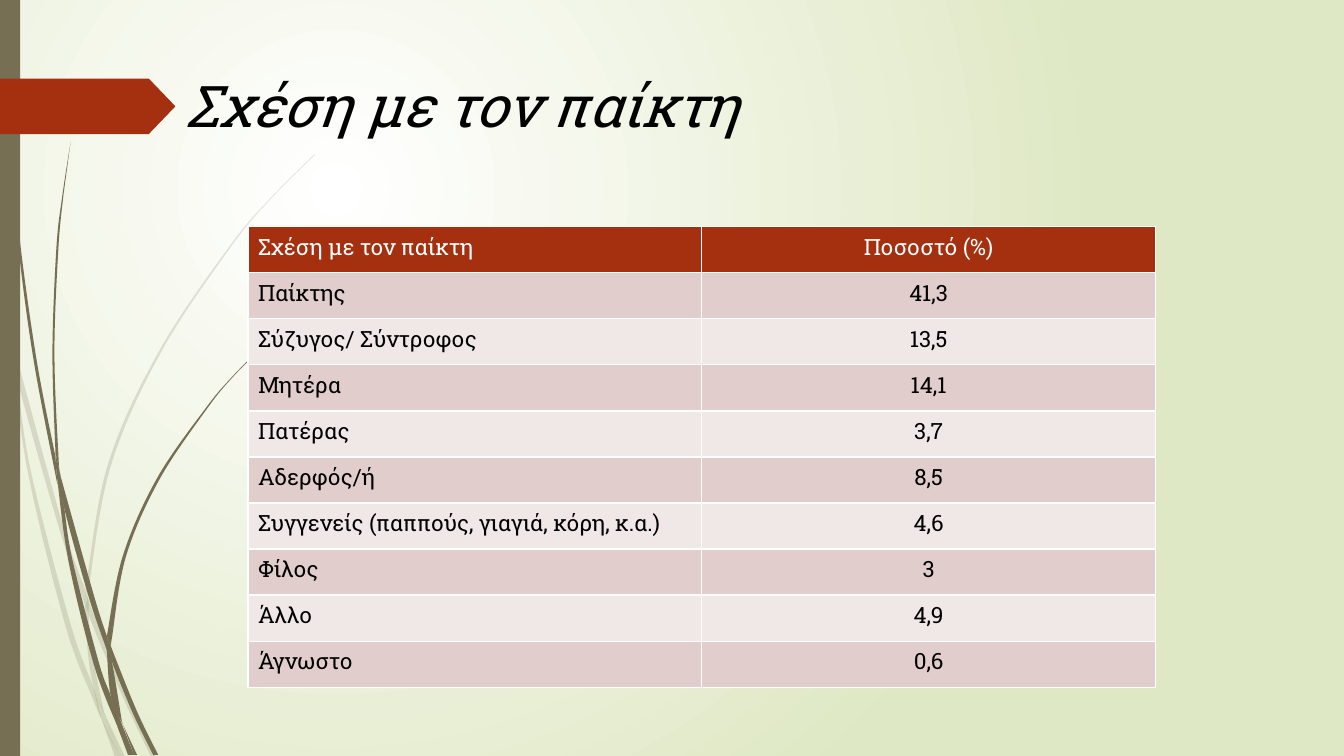
from lxml import etree
from pptx import Presentation
from pptx import util as u
from pptx.dml.color import RGBColor
from pptx.enum import shapes, text
from pptx.oxml.ns import qn

FONT = "Roboto Slab"
OLIVE, RUST, WHITE, BLACK = "766F54", "A53010", "FFFFFF", "000000"
HEADING = "Σχέση με τον παίκτη"
RELATIONS = [
    (HEADING, "Ποσοστό (%)"),
    ("Παίκτης", "41,3"),
    ("Σύζυγος/ Σύντροφος", "13,5"),
    ("Μητέρα", "14,1"),
    ("Πατέρας", "3,7"),
    ("Αδερφός/ή", "8,5"),
    ("Συγγενείς (παππούς, γιαγιά, κόρη, κ.α.)", "4,6"),
    ("Φίλος", "3"),
    ("Άλλο", "4,9"),
    ("Άγνωστο", "0,6"),
]
PALE_BLADES = [
    ([(.11, 3.5), (.09, 3.22), (0, 2.82)], [(0, 2.99), (.1, 3.44)]),
    ([(.14, 3.45), (.17, 3.76), (.58, 5.22), (.84, 5.99)],
     [(.85, 5.86), (.62, 5.2), (.14, 3.45)]),
    ([(.88, 5.96), (.88, 6.1), (1.23, 6.94), (1.5, 7.51)],
     [(1.55, 7.51), (1.27, 6.92), (.92, 6.07)]),
    ([(1.05, 7.11), (1.19, 7.51)], [(1.24, 7.51), (1.05, 7.11)]),
    ([(.11, 3.5), (.28, 4.7), (.65, 6.21), (.92, 6.93), (1.01, 7.14)],
     [(.99, 7.07), (.93, 6.83), (.7, 6.19), (.31, 4.69), (.17, 3.76)]),
    ([(.84, 5.99), (.87, 6.46), (.93, 6.83), (1.05, 7.11)],
     [(1.03, 7.06), (.91, 6.46), (.88, 6.1)]),
    ([(3.12, 1.53), (2.68, 1.97), (2.28, 2.44), (1.58, 3.48), (1.07, 4.61),
      (.85, 5.84)],
     [(.88, 5.96), (.88, 5.84), (1.1, 4.62), (1.6, 3.49), (2.29, 2.45),
      (2.68, 1.98), (3.12, 1.54)]),
    ([(1.01, 7.14), (1.14, 7.51)], [(1.19, 7.51), (1.01, 7.14)]),
    ([(.85, 5.86), (.84, 5.99), (.88, 6.08)], [(.88, 5.96), (.85, 5.86)]),
    ([(.93, 6.83), (1.01, 7.14), (1.19, 7.51)],
     [(1.19, 7.51), (1.05, 7.11), (.96, 6.92)]),
]
DARK_BLADES = [
    ([(.03, 0), (.07, 1.1), (.17, 2.33), (.33, 3.55), (.57, 4.81)],
     [(.55, 4.53), (.36, 3.55), (.19, 2.32), (.08, 1.09), (.04, 0)]),
    ([(.6, 4.72), (.64, 5.05), (.88, 5.92), (1.06, 6.45)],
     [(1.06, 6.31), (.93, 5.9), (.6, 4.72)]),
    ([(1.1, 6.41), (1.11, 6.56), (1.32, 7.08), (1.52, 7.49)],
     [(1.57, 7.49), (1.36, 7.06), (1.13, 6.49)]),
    ([(.57, 4.77), (.68, 5.57), (.93, 6.59), (1.17, 7.22)],
     [(1.16, 7.17), (1.1, 6.91), (.98, 6.57), (.72, 5.56), (.64, 5.05)]),
    ([(.7, 1.41), (.62, 1.93), (.56, 2.45), (.52, 3.49), (.55, 4.49)],
     [(.6, 4.72), (.58, 4.53), (.54, 3.49), (.58, 2.45), (.63, 1.93)]),
    ([(1.22, 7.19), (1.33, 7.49)], [(1.36, 7.49), (1.22, 7.19)]),
    ([(.55, 4.49), (.57, 4.77), (.64, 5.05)], [(.6, 4.72), (.55, 4.49)]),
    ([(2.6, 3.44), (2.31, 3.73), (2.04, 4.05), (1.56, 4.74), (1.22, 5.51),
      (1.06, 6.31)],
     [(1.1, 6.41), (1.11, 6.33), (1.25, 5.52), (1.58, 4.76), (2.05, 4.06),
      (2.31, 3.74), (2.61, 3.44)]),
    ([(1.17, 7.22), (1.27, 7.49)], [(1.31, 7.49), (1.17, 7.22)]),
    ([(1.06, 6.45), (1.1, 6.91), (1.22, 7.19)],
     [(1.21, 7.16), (1.11, 6.56), (1.06, 6.45)]),
    ([(1.06, 6.31), (1.06, 6.45), (1.11, 6.56)], [(1.1, 6.41), (1.06, 6.31)]),
    ([(1.1, 6.91), (1.17, 7.22), (1.3, 7.49)], [(1.33, 7.49), (1.16, 7.06)]),
]


def rgb(code):
    """Turn a hex string into a colour."""
    return RGBColor.from_string(code)


def paint(shape, code, opacity=100):
    """Fill a shape with one colour, without line or shadow."""
    shape.shadow.inherit = False
    shape.line.fill.background()
    shape.fill.solid()
    shape.fill.fore_color.rgb = rgb(code)
    if opacity < 100:
        color = shape.element.spPr.find(".//" + qn("a:srgbClr"))
        etree.SubElement(color, qn("a:alpha"), val=str(opacity * 1000))


def style_text(frame, size, code, align, italic=False):
    """Format the only paragraph of a text frame."""
    paragraph = frame.paragraphs[0]
    paragraph.alignment = align
    font = paragraph.runs[0].font
    font.name, font.size, font.italic, font.bold = FONT, u.Pt(size), italic, False
    font.color.rgb = rgb(code)


def bend(line, before, start, end, after):
    """Turn a straight segment into a curve that flows through its neighbours."""
    line.tag = qn("a:cubicBezTo")
    controls = ([s + (e - b) / 6 for b, s, e in zip(before, start, end)],
                [e - (a - s) / 6 for s, e, a in zip(start, end, after)])
    for i, (x, y) in enumerate(controls):
        line.insert(i, etree.Element(qn("a:pt"), x=str(round(x)), y=str(round(y))))


def add_blade(slide, edges, opacity):
    """Draw a piece of grass between two curved edges."""
    outline = [(u.Inches(x), u.Inches(y)) for edge in edges for x, y in edge]
    builder = slide.shapes.build_freeform(*outline[0], scale=1.0)
    builder.add_line_segments(outline[1:], close=True)
    blade = builder.convert_to_shape()
    paint(blade, OLIVE, opacity)
    lines = list(blade.element.iter(qn("a:lnTo")))
    points = [(int(p.get("x")), int(p.get("y"))) for p in blade.element.iter(qn("a:pt"))]
    first = 0
    for edge in edges:
        last = first + len(edge) - 1
        for i in range(first, last):
            bend(lines[i], points[max(i - 1, first)], points[i],
                 points[i + 1], points[min(i + 2, last)])
        first = last + 1


def add_block(slide, kind, left, top, width, height, code):
    """Add a plain preset shape and return it."""
    block = slide.shapes.add_shape(kind, *map(u.Inches, (left, top, width, height)))
    paint(block, code)
    return block


def set_background(slide):
    """Give the slide a circular gradient from white to pale green."""
    fill = slide.background.fill
    fill.gradient()
    for position, (stop, code) in enumerate(zip(fill.gradient_stops, (WHITE, "DFE8C4"))):
        stop.color.rgb = rgb(code)
        stop.position = position
    gradient = slide.element.find(".//" + qn("a:gradFill"))
    gradient.remove(gradient.find(qn("a:lin")))
    circle = etree.SubElement(gradient, qn("a:path"), {"path": "circle"})
    etree.SubElement(circle, qn("a:fillToRect"),
                     l="50000", t="50000", r="100000", b="100000")


def set_title(slide):
    """Place and format the title."""
    title = slide.shapes.title
    title.left, title.top, title.width, title.height = map(u.Inches, (1.74, .65, 9, .74))
    title.text_frame.text = HEADING
    title.text_frame.vertical_anchor = text.MSO_ANCHOR.TOP
    title.text_frame.auto_size = text.MSO_AUTO_SIZE.NONE
    style_text(title.text_frame, 41, BLACK, text.PP_ALIGN.LEFT, italic=True)


def add_borders(cell):
    """Draw thin white borders around a cell."""
    properties = cell._tc.get_or_add_tcPr()
    for i, side in enumerate("LRTB"):
        line = etree.Element(qn("a:ln" + side), w=str(u.Pt(1)))
        solid = etree.SubElement(line, qn("a:solidFill"))
        etree.SubElement(solid, qn("a:srgbClr"), val=WHITE)
        properties.insert(i, line)


def add_relations(slide):
    """Add the table of relations and percentages."""
    area = map(u.Inches, (2.46, 2.25, 9, 4.57))
    table = slide.shapes.add_table(len(RELATIONS), 2, *area).table
    aligns = (text.PP_ALIGN.LEFT, text.PP_ALIGN.CENTER)
    for r, row in enumerate(RELATIONS):
        band = RUST if r == 0 else ("F0E8E7", "E1CDCC")[r % 2]
        for c, (value, align) in enumerate(zip(row, aligns)):
            cell = table.cell(r, c)
            cell.text_frame.text = value
            style_text(cell.text_frame, 16, BLACK if r else WHITE, align)
            cell.fill.solid()
            cell.fill.fore_color.rgb = rgb(band)
            add_borders(cell)


def main():
    """Build the slide and save it."""
    deck = Presentation()
    deck.slide_width, deck.slide_height = u.Inches(13.33), u.Inches(7.5)
    slide = deck.slides.add_slide(deck.slide_layouts[5])
    set_background(slide)
    for blades, opacity in ((PALE_BLADES, 20), (DARK_BLADES, 100)):
        for edges in blades:
            add_blade(slide, edges, opacity)
    add_block(slide, shapes.MSO_SHAPE.RECTANGLE, 0, 0, .2, 7.5, OLIVE)
    pointer = add_block(slide, shapes.MSO_SHAPE.PENTAGON, 0, .78, 1.74, .55, RUST)
    pointer.adjustments[0] = .48
    set_title(slide)
    add_relations(slide)
    deck.save("out.pptx")


if __name__ == "__main__":
    main()
